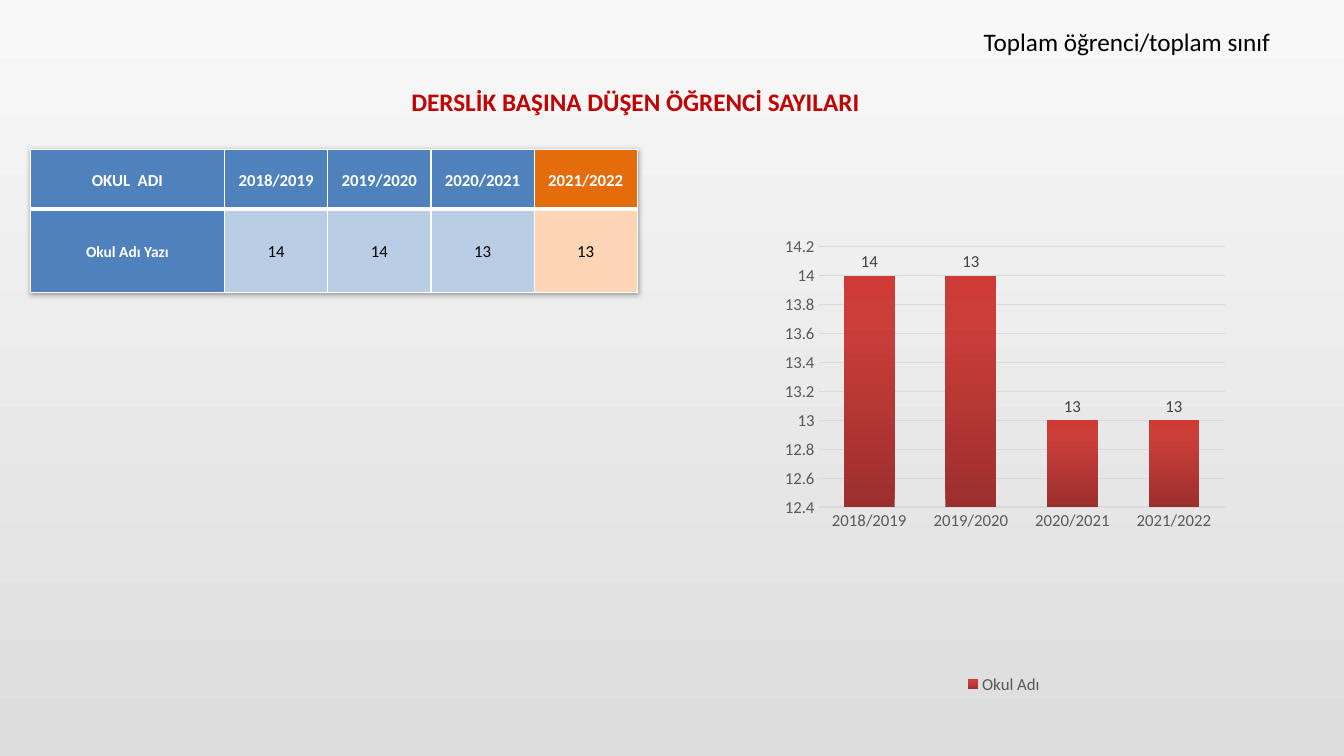
from copy import deepcopy

from lxml import etree
from pptx import Presentation
from pptx import util as u
from pptx.chart.data import CategoryChartData
from pptx.dml.color import RGBColor
from pptx.enum import chart as ch, text as tx
from pptx.oxml import parse_xml
from pptx.oxml.ns import nsdecls, qn

Cm, Pt = u.Cm, u.Pt
HUES = {
    "red": "C00000", "white": "FFFFFF", "black": "000000",
    "blue": "4F81BD", "pale": "B9CDE5", "orange": "E46C0A", "peach": "FCD5B5",
    "gray": "595959", "dark": "404040", "grid": "D9D9D9",
    "top": "F8F8F8", "base": "DDDDDD",
    "deep": "9C2F2D", "mid": "CB3E3A", "light": "CE3B37",
}
YEARS = ["2018/2019", "2019/2020", "2020/2021", "2021/2022"]
RATES = [14, 14, 13, 13]


def style(font, size, hue, bold=False):
    font.name, font.size, font.bold = "Calibri", Pt(size), bold
    font.color.rgb = RGBColor.from_string(HUES[hue])


def shade(fill, root, angle, stops):
    """Give fill a linear gradient with any number of (position, hue) stops."""
    fill.gradient()
    fill.gradient_angle = angle
    group = root.find(".//" + qn("a:gsLst"))
    while len(group) < len(stops):
        group.append(deepcopy(group[-1]))
    for stop, (place, hue) in zip(fill.gradient_stops, stops):
        stop.position = place
        stop.color.rgb = RGBColor.from_string(HUES[hue])


deck = Presentation()
deck.slide_width, deck.slide_height = Cm(33.87), Cm(19.05)
slide = deck.slides.add_slide(deck.slide_layouts[5])
back = slide.background.fill
shade(back, slide.element, 270, [(0, "top"), (1, "base")])

# Title
title = slide.shapes.title
title.left, title.top, title.width, title.height = Cm(10.11), Cm(1.93), Cm(11.91), Cm(1.14)
frame = title.text_frame
frame.word_wrap = False
frame.auto_size = tx.MSO_AUTO_SIZE.SHAPE_TO_FIT_TEXT
frame.vertical_anchor = tx.MSO_ANCHOR.TOP
para = frame.paragraphs[0]
para.alignment = tx.PP_ALIGN.LEFT
para.line_spacing, para.space_after = 1.15, Pt(8)
run = para.add_run()
run.text = "DERSLİK BAŞINA DÜŞEN ÖĞRENCİ SAYILARI"
style(run.font, 18, "red", True)

# Table
holder = slide.shapes.add_table(2, 5, Cm(0.76), Cm(3.76), Cm(15.3), Cm(3.61))
table = holder.table
for col, width in zip(table.columns, [4.9] + [2.6] * 4):
    col.width = Cm(width)
for row, height in zip(table.rows, [1.5, 2.11]):
    row.height = Cm(height)
glow = parse_xml(
    f'<a:effectLst {nsdecls("a")}><a:outerShdw blurRad="50800" dist="12700" dir="5400000">'
    '<a:srgbClr val="000000"><a:alpha val="35000"/></a:srgbClr></a:outerShdw></a:effectLst>')
table._tbl.tblPr.insert(0, glow)

rows = [["OKUL  ADI"] + YEARS, ["Okul Adı Yazı"] + RATES]
fills = [["blue"] * 4 + ["orange"], ["blue"] + ["pale"] * 3 + ["peach"]]
for r, row in enumerate(rows):
    for c, value in enumerate(row):
        cell = table.cell(r, c)
        cell.vertical_anchor = tx.MSO_ANCHOR.MIDDLE
        cell.margin_left = cell.margin_right = Cm(0.18)
        cell.margin_top = cell.margin_bottom = 0
        para = cell.text_frame.paragraphs[0]
        para.alignment, para.line_spacing = tx.PP_ALIGN.CENTER, 1.15
        run = para.add_run()
        run.text = str(value)
        head = r == 0 or c == 0
        style(run.font, 11 if r and head else 12, "white" if head else "black", head)
        props = cell._tc.get_or_add_tcPr()
        for side in ("lnL", "lnR", "lnT", "lnB"):
            thick = 3 if side == ("lnT" if r else "lnB") else 1
            line = etree.SubElement(props, qn(f"a:{side}"), w=str(Pt(thick)))
            paint = etree.SubElement(line, qn("a:solidFill"))
            etree.SubElement(paint, qn("a:srgbClr"), val=HUES["white"])
        cell.fill.solid()
        cell.fill.fore_color.rgb = RGBColor.from_string(HUES[fills[r][c]])

# Chart
data = CategoryChartData()
data.categories = YEARS
data.add_series("Okul Adı", RATES)
chart = slide.shapes.add_chart(
    ch.XL_CHART_TYPE.COLUMN_CLUSTERED, Cm(18.72), Cm(4.62), Cm(13.16), Cm(12.98), data).chart
style(chart.font, 10, "black")
chart.has_title = False
chart.has_legend = True
chart.legend.position = ch.XL_LEGEND_POSITION.BOTTOM
chart.legend.include_in_layout = False
style(chart.legend.font, 12, "gray")

cats, vals = chart.category_axis, chart.value_axis
for axis in (cats, vals):
    axis.major_tick_mark = axis.minor_tick_mark = ch.XL_TICK_MARK.NONE
    style(axis.tick_labels.font, 12, "gray")
vals.minimum_scale, vals.maximum_scale, vals.major_unit = 12.4, 14.2, 0.2
vals.format.line.fill.background()
for line, width in ((cats.format.line, 1), (vals.major_gridlines.format.line, 0.75)):
    line.color.rgb = RGBColor.from_string(HUES["grid"])
    line.width = Pt(width)

plot = chart.plots[0]
plot.gap_width, plot.overlap, plot.vary_by_categories = 100, -24, False
bars = plot.series[0]
shade(bars.format.fill, bars._element, 90, [(0, "deep"), (0.8, "mid"), (1, "light")])
labels = bars.data_labels
labels.show_value = True
labels.position = ch.XL_LABEL_POSITION.OUTSIDE_END
style(labels.font, 12, "dark")
label = bars.points[1].data_label
run = label.text_frame.paragraphs[0].add_run()
run.text = "13"
style(run.font, 12, "dark")
label.position = ch.XL_LABEL_POSITION.OUTSIDE_END

area = chart._chartSpace.chart.plotArea
for old in area.findall(qn("c:layout")):
    area.remove(old)
layout = etree.Element(qn("c:layout"))
manual = etree.SubElement(layout, qn("c:manualLayout"))
for tag, value in (("layoutTarget", "inner"), ("xMode", "edge"), ("yMode", "edge"),
                   ("x", 0.145), ("y", 0.123), ("w", 0.778), ("h", 0.506)):
    etree.SubElement(manual, qn(f"c:{tag}"), val=str(value))
area.insert(0, layout)

# Note
note = slide.shapes.add_textbox(Cm(24.54), Cm(0.53), Cm(8.48), Cm(1.02)).text_frame
note.word_wrap = True
note.auto_size = tx.MSO_AUTO_SIZE.SHAPE_TO_FIT_TEXT
run = note.paragraphs[0].add_run()
run.text = "Toplam öğrenci/toplam sınıf"
style(run.font, 18, "black")

deck.save("out.pptx")
